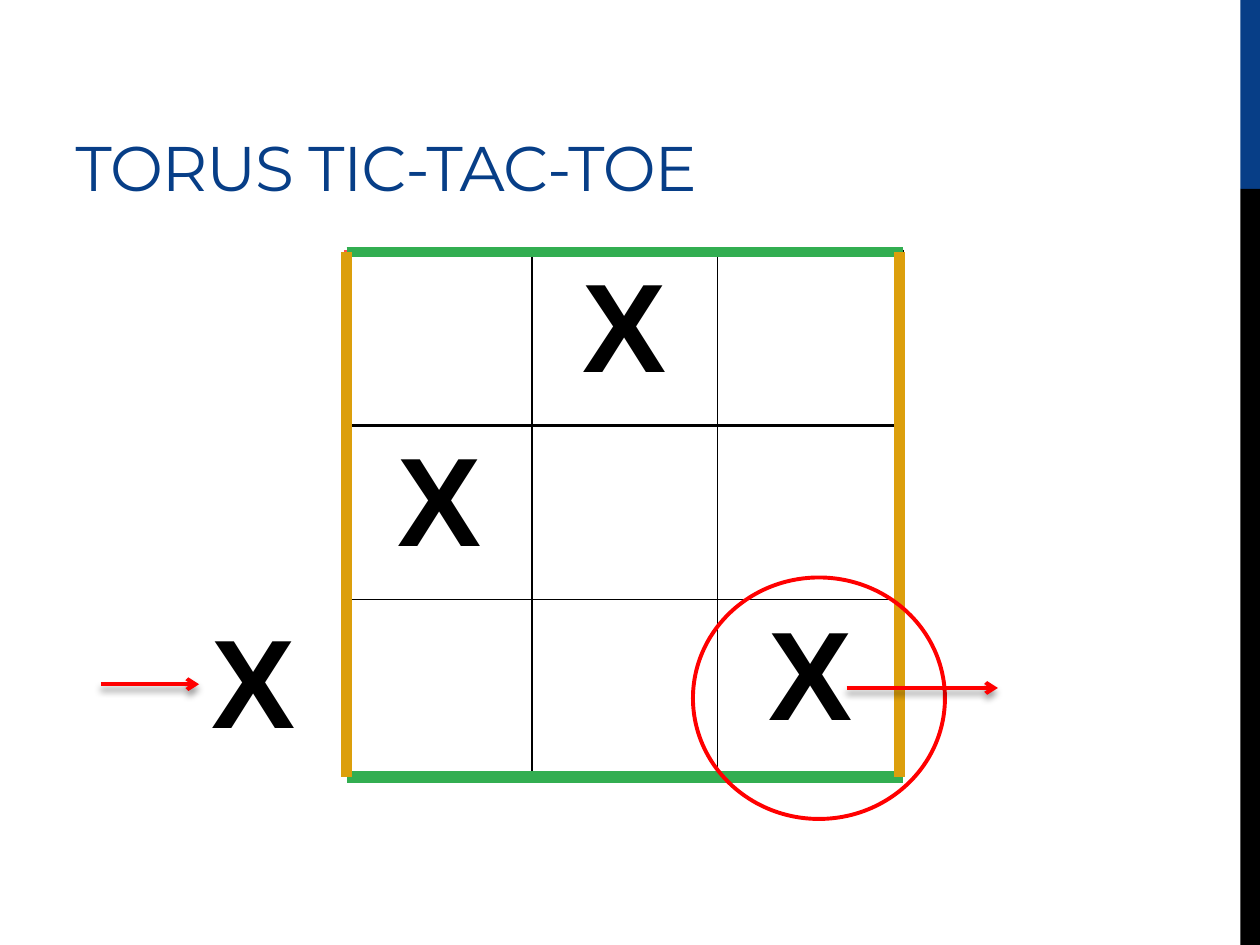
import pptx
import pptx.dml.color
import pptx.enum.shapes
import pptx.enum.text
import pptx.oxml
import pptx.oxml.ns
import pptx.util

Pt = pptx.util.Pt
RGBColor = pptx.dml.color.RGBColor
Shapes = pptx.enum.shapes.MSO_SHAPE

NAVY = RGBColor(0x07, 0x3E, 0x87)
BLACK = RGBColor(0, 0, 0)
WHITE = RGBColor(255, 255, 255)
GREEN = RGBColor(0x32, 0xAE, 0x51)
GOLD = RGBColor(0xDC, 0x9F, 0x0C)
CORAL = RGBColor(0xFF, 0x50, 0x50)
RED = RGBColor(255, 0, 0)

TITLE = "TORUS TIC-TAC-TOE"
BOARD = [
    ["", "X", ""],
    ["X", "", ""],
    ["", "", "X"],
]
LEFT, TOP = 198, 144
COLUMN, ROW = 106.08, 99.36
RIGHT, BOTTOM = LEFT + 3 * COLUMN, 444.24
GOLD_RIGHT = 514

SIDE_BARS = [(0, 108, NAVY), (108, 432, BLACK)]  # top, height, colour
GLUED_EDGES = [  # start x, start y, end x, end y, colour
    (LEFT, TOP, RIGHT, TOP, GREEN),
    (LEFT, BOTTOM, RIGHT, BOTTOM, GREEN),
    (LEFT, TOP, LEFT, BOTTOM, GOLD),
    (GOLD_RIGHT, TOP, GOLD_RIGHT, BOTTOM, GOLD),
]
ARROWS = [(57.6, 391, 113.76, 391), (483.84, 393.12, 570.24, 393.12)]

SHADOW = (
    '<a:outerShdw blurRad="50800" dist="38100" dir="5400000" rotWithShape="0">'
    '<a:srgbClr val="000000"><a:alpha val="40000"/></a:srgbClr></a:outerShdw>'
)


def parse_drawing(tag, attributes="", content=""):
    namespace = pptx.oxml.ns.nsdecls("a")
    return pptx.oxml.parse_xml(f"<a:{tag} {namespace} {attributes}>{content}</a:{tag}>")


def add_line(slide, ends, color, width, effect=""):
    line = slide.shapes.add_connector(
        pptx.enum.shapes.MSO_CONNECTOR.STRAIGHT, *(Pt(value) for value in ends))
    line.line.color.rgb = color
    line.line.width = Pt(width)
    line._element.spPr.append(parse_drawing("effectLst", content=effect))
    return line


def add_shape(slide, preset, left, top, width, height):
    shape = slide.shapes.add_shape(preset, Pt(left), Pt(top), Pt(width), Pt(height))
    shape.shadow.inherit = False
    return shape


def format_mark(paragraph):
    for run in paragraph.runs:
        run.font.name = "Arial"
        run.font.size = Pt(72)
        run.font.bold = True
        run.font.color.rgb = BLACK


def set_borders(cell, row, column):
    borders = {
        "lnL": (CORAL, 3) if column == 0 else (BLACK, 1),
        "lnR": (BLACK, 1),
        "lnT": (GREEN, 3) if row == 0 else (BLACK, 2 if row == 1 else 1),
        "lnB": (GREEN, 3) if row == 2 else (BLACK, 2 if row == 0 else 1),
    }
    properties = cell._tc.get_or_add_tcPr()
    for tag, (color, width) in borders.items():
        fill = f'<a:solidFill><a:srgbClr val="{color}"/></a:solidFill>'
        properties.append(parse_drawing(tag, f'w="{Pt(width)}"', fill))


def add_board(slide):
    table = slide.shapes.add_table(
        3, 3, Pt(LEFT), Pt(TOP), Pt(3 * COLUMN), Pt(3 * ROW)).table
    table.first_row = False
    table.horz_banding = False
    for row, marks in enumerate(BOARD):
        table.rows[row].height = Pt(ROW)
        for column, mark in enumerate(marks):
            table.columns[column].width = Pt(COLUMN)
            cell = table.cell(row, column)
            set_borders(cell, row, column)
            cell.fill.solid()
            cell.fill.fore_color.rgb = WHITE
            if mark:
                paragraph = cell.text_frame.paragraphs[0]
                paragraph.text = mark
                paragraph.alignment = pptx.enum.text.PP_ALIGN.CENTER
                format_mark(paragraph)


def add_title(slide):
    title = slide.shapes.title
    title.left, title.top, title.width, title.height = Pt(36), Pt(12), Pt(456), Pt(108)
    frame = title.text_frame
    frame.text = TITLE
    frame.vertical_anchor = pptx.enum.text.MSO_ANCHOR.BOTTOM
    paragraph = frame.paragraphs[0]
    paragraph.alignment = pptx.enum.text.PP_ALIGN.LEFT
    run = paragraph.runs[0]
    run.font.name = "Montserrat"
    run.font.size = Pt(36)
    run.font.color.rgb = NAVY
    run.font._element.set("spc", "-60")


def add_wrapped_mark(slide):
    box = slide.shapes.add_textbox(Pt(113.76), Pt(340.56), Pt(72), Pt(94.32))
    box.text_frame.word_wrap = True
    paragraph = box.text_frame.paragraphs[0]
    paragraph.text = "X"
    paragraph.space_before = Pt(6)
    format_mark(paragraph)


def main():
    presentation = pptx.Presentation()
    presentation.slide_width, presentation.slide_height = Pt(720), Pt(540)
    slide = presentation.slides.add_slide(presentation.slide_layouts[5])

    for top, height, color in SIDE_BARS:
        bar = add_shape(slide, Shapes.RECTANGLE, 708.75, top, 11.25, height)
        bar.fill.solid()
        bar.fill.fore_color.rgb = color
        bar.line.fill.background()

    add_title(slide)
    add_board(slide)
    for *ends, color in GLUED_EDGES:
        add_line(slide, ends, color, 6)

    circle = add_shape(slide, Shapes.OVAL, 396, 330, 144, 138)
    circle.fill.background()
    circle.line.color.rgb = RED
    circle.line.width = Pt(2.25)

    add_wrapped_mark(slide)
    for ends in ARROWS:
        arrow = add_line(slide, ends, RED, 2.25, SHADOW)
        arrow.line._get_or_add_ln().append(parse_drawing("tailEnd", 'type="arrow"'))

    presentation.save("out.pptx")


if __name__ == "__main__":
    main()
